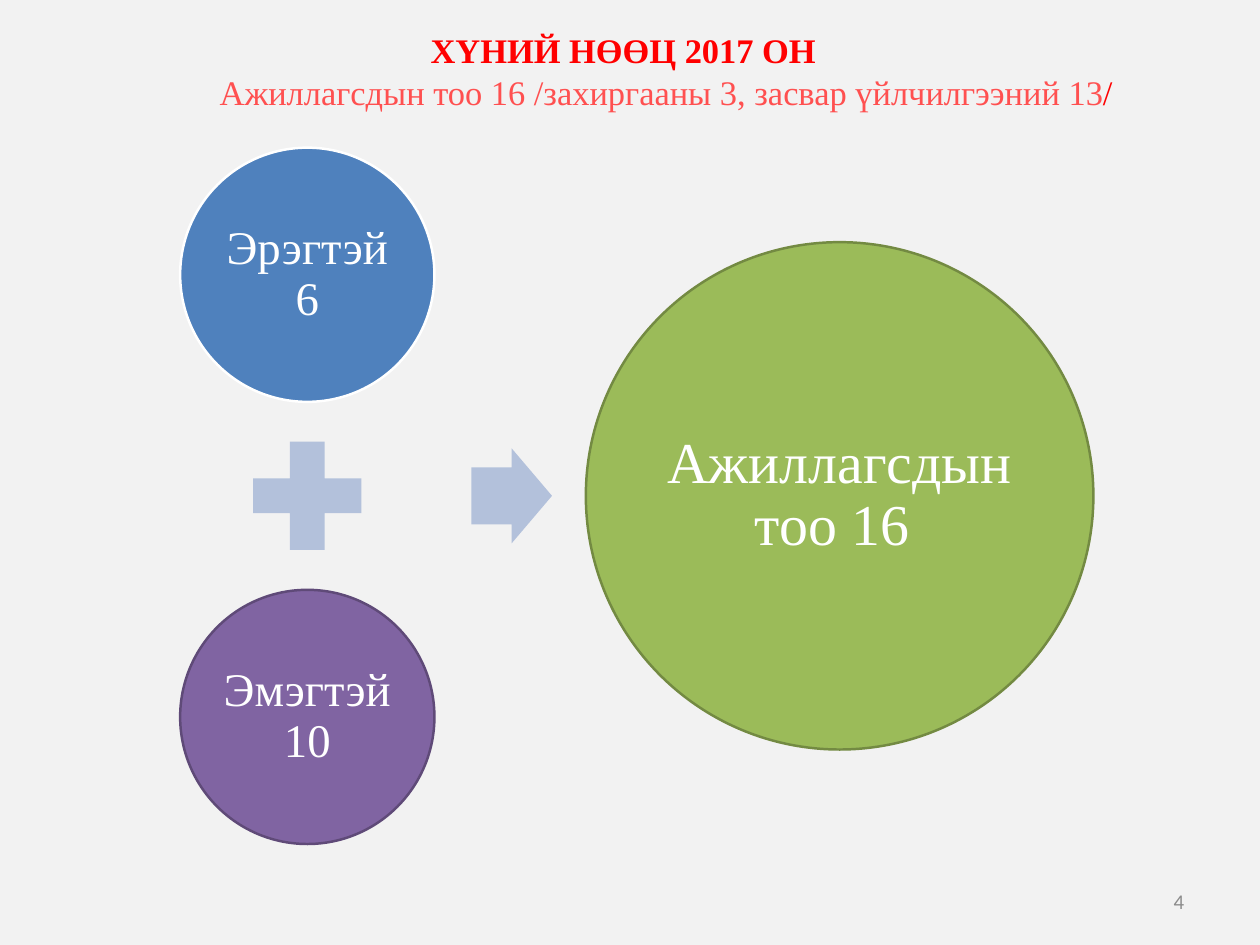
"""Build the staff headcount slide for 2017."""
from pptx import Presentation
from pptx.dml.color import RGBColor
from pptx.enum.shapes import MSO_SHAPE as Shape
from pptx.enum.text import MSO_ANCHOR as Anchor, MSO_AUTO_SIZE as AutoSize, PP_ALIGN as Align
from pptx.util import Cm, Pt

SERIF = "Times New Roman"
RED = "FF0000"
PALE_BLUE = "B3C1DB"
MIDDLE_Y = 14.22
COLUMN_X = 8.81
STEP = 6.34


def colour(value):
    return RGBColor.from_string(value)


def write(para, text, size, hue, font=SERIF, bold=False, align=Align.CENTER):
    para.alignment = align
    span = para.add_run()
    span.text = text
    span.font.size = Pt(size)
    span.font.name = font
    span.font.bold = bold
    span.font.color.rgb = colour(hue)


def set_frame(frame, anchor, side, top):
    frame.word_wrap = True
    frame.auto_size = AutoSize.NONE
    frame.vertical_anchor = anchor
    frame.margin_left = frame.margin_right = Cm(side)
    frame.margin_top = frame.margin_bottom = Cm(top)


def add_title(page):
    title = page.shapes.title
    title.left, title.top, title.width, title.height = Cm(1.8), Cm(0.43), Cm(32.13), Cm(2.97)
    frame = title.text_frame
    set_frame(frame, Anchor.BOTTOM, 0.36, 0.18)
    write(frame.paragraphs[0], "ХҮНИЙ НӨӨЦ 2017 ОН", 28, RED, bold=True)
    subtitle = frame.add_paragraph()
    write(subtitle, "Ажиллагсдын тоо 16 /захиргааны 3, засвар үйлчилгээний 13", 28, "FF5050")
    write(subtitle, "/", 28, RED)
    subtitle._p.get_or_add_pPr().set("marL", str(Cm(2.46)))


def add_figure(page, kind, centre_x, centre_y, width, height, fill):
    figure = page.shapes.add_shape(
        kind, Cm(centre_x - width / 2), Cm(centre_y - height / 2), Cm(width), Cm(height))
    figure.shadow.inherit = False
    figure.fill.solid()
    figure.fill.fore_color.rgb = colour(fill)
    figure.line.fill.background()
    return figure


def add_circle(page, text, centre_x, centre_y, diameter, fill, outline, size, inset):
    circle = add_figure(page, Shape.OVAL, centre_x, centre_y, diameter, diameter, fill)
    circle.line.color.rgb = colour(outline)
    circle.line.width = Pt(2)
    set_frame(circle.text_frame, Anchor.MIDDLE, inset, inset)
    para = circle.text_frame.paragraphs[0]
    para.line_spacing = 0.9
    write(para, text, size, "FFFFFF")


def add_page_number(page):
    box = page.shapes.add_textbox(Cm(25.88), Cm(25.12), Cm(8.43), Cm(1.45))
    set_frame(box.text_frame, Anchor.MIDDLE, 0.36, 0.18)
    write(box.text_frame.paragraphs[0], "4", 17, "8C8C8C", font="Calibri", align=Align.RIGHT)


def main():
    deck = Presentation()
    deck.slide_width, deck.slide_height = Cm(36.12), Cm(27.1)
    page = deck.slides.add_slide(deck.slide_layouts[5])
    page.background.fill.solid()
    page.background.fill.fore_color.rgb = colour("F2F2F2")

    add_title(page)
    add_page_number(page)
    add_circle(page, "Эрэгтэй 6", COLUMN_X, MIDDLE_Y - STEP, 7.29, "4F81BD", "FFFFFF", 38, 0.13)
    add_figure(page, Shape.MATH_PLUS, COLUMN_X, MIDDLE_Y, 4.22, 4.22, PALE_BLUE)
    add_circle(page, "Эмэгтэй 10", COLUMN_X, MIDDLE_Y + STEP, 7.29, "8064A2", "5F4A78", 38, 0.13)
    arrow = add_figure(page, Shape.RIGHT_ARROW, 14.67, MIDDLE_Y, 2.31, 2.72, PALE_BLUE)
    arrow.adjustments[0] = 0.6
    add_circle(page, "Ажиллагсдын тоо 16 ", 24.07, MIDDLE_Y, 14.55, "9BBB59", "738A42", 47, 0.18)
    deck.save("out.pptx")


if __name__ == "__main__":
    main()
